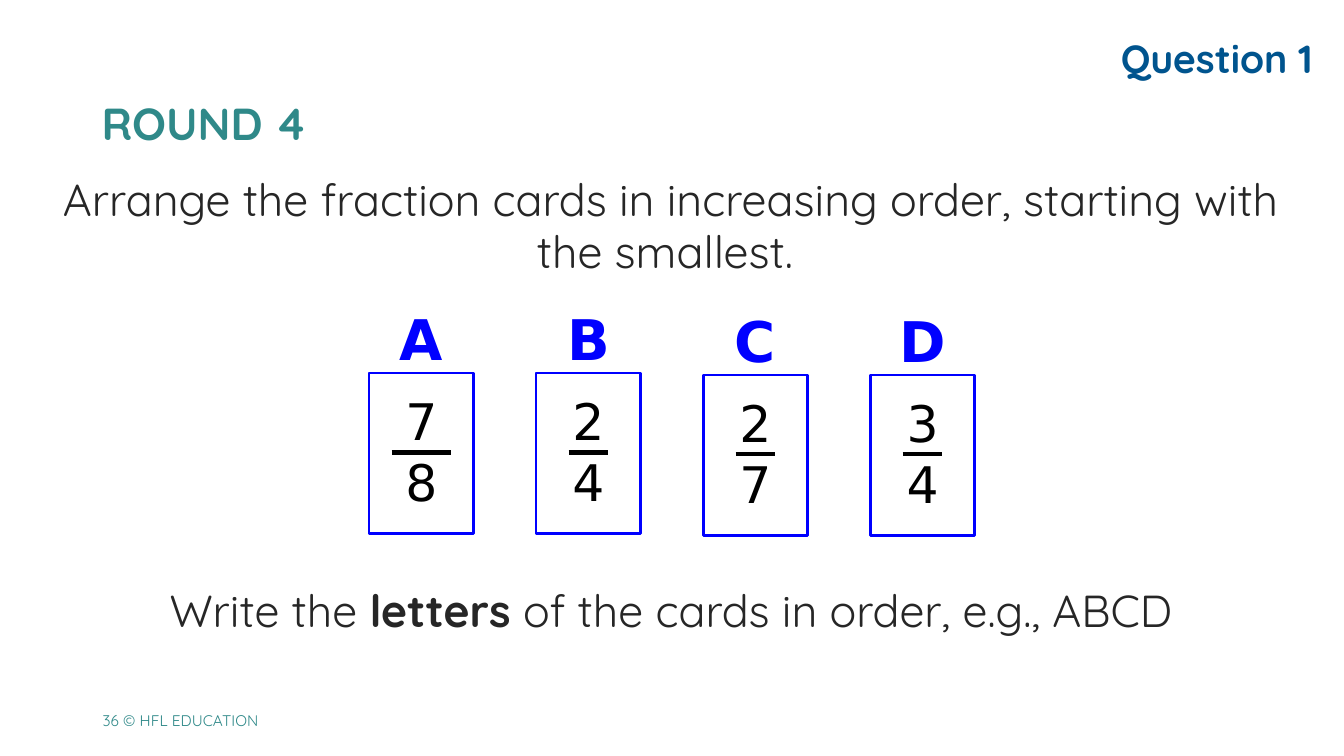
from lxml import etree
from pptx import Presentation
from pptx.dml.color import RGBColor
from pptx.enum import shapes, text
from pptx.oxml.ns import qn
from pptx.util import Cm, Pt

TEAL = RGBColor(0x2F, 0x89, 0x89)
NAVY = RGBColor(0x00, 0x54, 0x8E)
BLUE = RGBColor(0x00, 0x00, 0xFF)
INK = RGBColor(0x26, 0x26, 0x26)
BLACK = RGBColor(0x00, 0x00, 0x00)
BODY_FONT, CARD_FONT = "Quicksand", "DejaVu Sans"
LEFT, CENTER, RIGHT = text.PP_ALIGN.LEFT, text.PP_ALIGN.CENTER, text.PP_ALIGN.RIGHT
MIDDLE = text.MSO_ANCHOR.MIDDLE


def format_run(r, size, color, bold=False, font=BODY_FONT):
    r.font.name = font
    r.font.size = Pt(size)
    r.font.bold = bold
    r.font.color.rgb = color


def add_text(parent, box, words, size, color, align=CENTER, bold=False, font=BODY_FONT):
    sp = parent.add_textbox(*map(Cm, box))
    tf = sp.text_frame
    tf.word_wrap = True
    p = tf.paragraphs[0]
    p.text = words
    p.alignment = align
    format_run(p.runs[0], size, color, bold, font)
    return tf


def add_header(s, x, y, w, h):
    title = s.shapes.title
    title.left, title.top, title.width, title.height = map(Cm, (x, y, w, h))
    tf = title.text_frame
    tf.text = "ROUND 4"
    tf.vertical_anchor = MIDDLE
    p = tf.paragraphs[0]
    p.alignment = LEFT
    format_run(p.runs[0], 32, TEAL, True)
    add_text(s.shapes, (x + w - 1.98, y - 0.76, 8, 1.45), "Question 1", 28, NAVY, RIGHT, True)


def add_instructions(s, x, y, w, h):
    tf = add_text(s.shapes, (x, y, w, 3),
                  "Arrange the fraction cards in increasing order, starting with the smallest. ",
                  32, INK)
    tf.paragraphs[0].line_spacing = 0.96
    tf = add_text(s.shapes, (x, y + h - 1.7, w, 1.7), "Write the ", 32, INK)
    for words, bold in (("letters", True), (" of the cards in order, e.g., ABCD", False)):
        r = tf.paragraphs[0].add_run()
        r.text = words
        format_run(r, 32, INK, bold)


def add_card(s, x, y, w, h, letter, top, bottom, bar):
    card = s.shapes.add_group_shape().shapes
    add_text(card, (x, y + 0.3, w, 1.8), top, 36, BLACK, font=CARD_FONT)
    add_text(card, (x, y + 1.85, w, 1.8), bottom, 36, BLACK, font=CARD_FONT)
    middle = x + w / 2
    line = card.add_connector(shapes.MSO_CONNECTOR.STRAIGHT, Cm(middle - bar / 2), Cm(y + 2),
                              Cm(middle + bar / 2), Cm(y + 2))
    line.line.color.rgb = BLACK
    line.line.width = Pt(3)
    etree.SubElement(line._element.spPr, qn("a:effectLst"))
    frame = card.add_shape(shapes.MSO_SHAPE.RECTANGLE, *map(Cm, (x, y, w, h)))
    frame.shadow.inherit = False
    frame.fill.background()
    frame.line.color.rgb = BLUE
    frame.line.width = Pt(2)
    add_text(card, (x, y - 1.85, w, 1.96), letter, 40, BLUE, bold=True, font=CARD_FONT)


def add_cards(s, x, y, w, h):
    pitch = 4.21
    cards = (("A", "7", "8", 1.5, 0), ("B", "2", "4", 1, 0),
             ("C", "2", "7", 1, 0.05), ("D", "3", "4", 1, 0.05))
    for i, (letter, top, bottom, bar, drop) in enumerate(cards):
        add_card(s, x + i * pitch, y + drop, w - 3 * pitch, h, letter, top, bottom, bar)


def add_footer(s, x, y, w, h):
    tf = add_text(s.shapes, (x, y, w, h), "36 © HFL EDUCATION", 11, TEAL, LEFT)
    tf.vertical_anchor = MIDDLE


def main():
    prs = Presentation()
    prs.slide_width, prs.slide_height = Cm(33.87), Cm(19.05)
    s = prs.slides.add_slide(prs.slide_layouts[5])
    add_footer(s, 2.34, 17.65, 6.99, 1.02)
    add_header(s, 2.31, 1.5, 25, 3.2)
    add_instructions(s, 1.32, 4.3, 31.19, 11.95)
    add_cards(s, 9.3, 9.4, 15.27, 4.04)
    prs.save("out.pptx")


if __name__ == "__main__":
    main()
